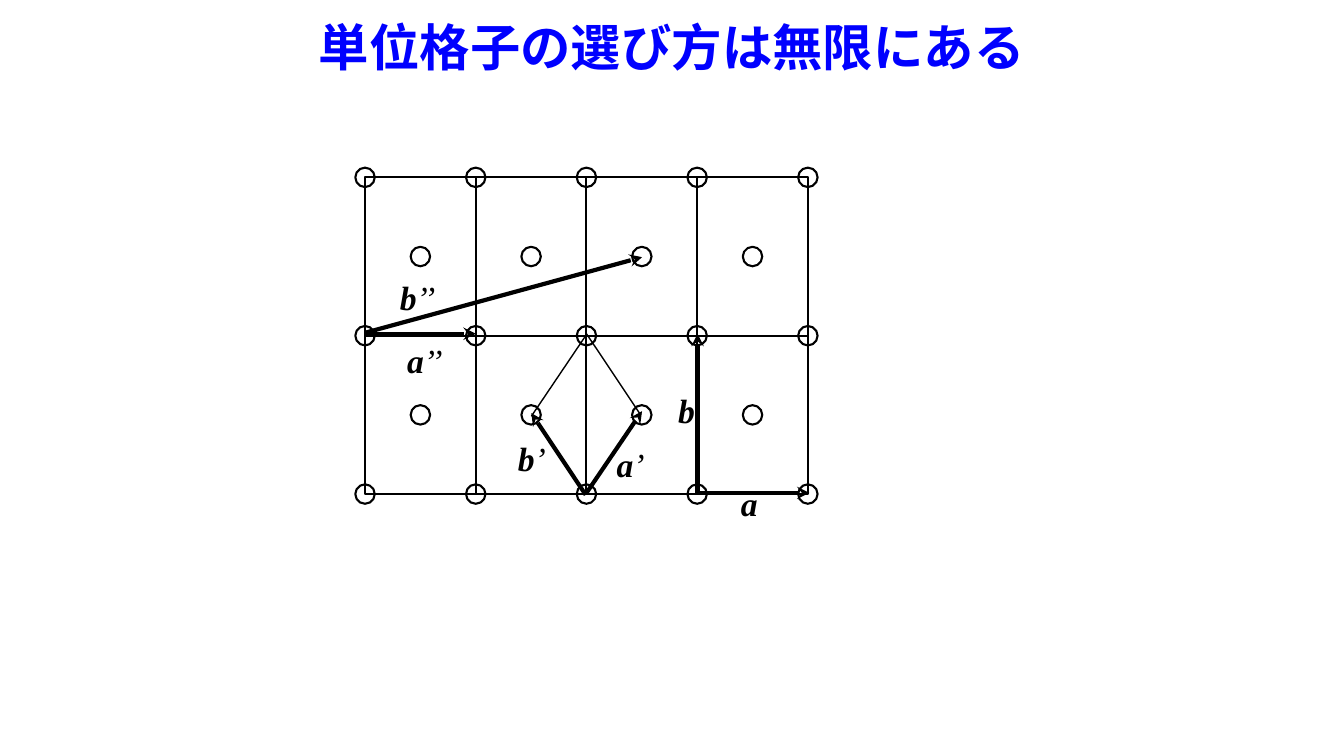
from dataclasses import dataclass
from itertools import product

from lxml.etree import SubElement
from pptx import Presentation
from pptx.dml.color import RGBColor
from pptx.enum.shapes import MSO_CONNECTOR, MSO_SHAPE
from pptx.enum.text import MSO_ANCHOR, PP_ALIGN
from pptx.oxml.ns import qn
from pptx.shapes.shapetree import GroupShapes
from pptx.slide import Slide
from pptx.text.text import _Run
from pptx.util import Cm, Pt


@dataclass(frozen=True)
class Theme:
    ink: RGBColor = RGBColor(0, 0, 0)
    title_color: RGBColor = RGBColor(0, 0, 255)
    font: str = "Times New Roman"
    title_size: int = 36
    label_size: int = 24
    lattice_line: float = 1.5
    vector_line: float = 3
    guide_line: float = 1


@dataclass(frozen=True)
class Segment:
    """A straight line between two points, in centimetres."""
    start: tuple[float, float]
    end: tuple[float, float]
    is_vector: bool = True


@dataclass(frozen=True)
class Label:
    """A vector name: an italic letter followed by its prime marks."""
    letter: str
    primes: str
    left: float
    top: float
    width: float


THEME = Theme()
COLUMNS, ROWS = 4, 2
LATTICE_LEFT, LATTICE_TOP = 9.2, 4.47
CELL_WIDTH, CELL_HEIGHT = 2.79, 3.99
ATOM_SIZE = 0.49
LABEL_HEIGHT = 1.27

SEGMENTS = [
    # Rectangular cell: a, b
    Segment((17.58, 12.42), (20.4, 12.42)),
    Segment((17.58, 12.42), (17.58, 8.41)),
    # Rhombic cell: a’, b’ and the two closing sides
    Segment((14.78, 12.42), (16.18, 10.36)),
    Segment((14.76, 12.47), (13.39, 10.41)),
    Segment((13.39, 10.49), (14.78, 8.43), is_vector=False),
    Segment((16.15, 10.46), (14.78, 8.41), is_vector=False),
    # Oblique cell: a’’, b’’
    Segment((9.19, 8.41), (11.99, 8.41)),
    Segment((9.22, 8.38), (16.18, 6.48)),
]

LABELS = [
    Label("a", "", 18.42, 12.04, 0.94),
    Label("b", "", 16.84, 9.7, 0.94),
    Label("a", "’", 15.29, 11.05, 1.22),
    Label("b", "’", 12.8, 10.9, 1.22),
    Label("a", "’’", 10.01, 8.43, 1.42),
    Label("b", "’’", 9.83, 6.86, 1.4),
]


def format_run(run: _Run, size: int, color: RGBColor, bold: bool, italic: bool) -> None:
    run.font.name = THEME.font
    run.font.size = Pt(size)
    run.font.color.rgb = color
    run.font.bold = bold
    run.font.italic = italic


def add_title(slide: Slide, text: str) -> None:
    text_frame = slide.shapes.add_textbox(Cm(4.23), Cm(0), Cm(25.4), Cm(2.33)).text_frame
    text_frame.word_wrap = True
    text_frame.vertical_anchor = MSO_ANCHOR.MIDDLE
    text_frame.text = text
    paragraph = text_frame.paragraphs[0]
    paragraph.alignment = PP_ALIGN.CENTER
    format_run(paragraph.runs[0], THEME.title_size, THEME.title_color, True, False)


def add_outline(shapes: GroupShapes, kind: MSO_SHAPE, left: float, top: float,
                width: float, height: float) -> None:
    shape = shapes.add_shape(kind, Cm(left), Cm(top), Cm(width), Cm(height))
    shape.shadow.inherit = False
    shape.fill.background()
    shape.line.color.rgb = THEME.ink
    shape.line.width = Pt(THEME.lattice_line)


def add_atom(shapes: GroupShapes, column: float, row: float) -> None:
    left = LATTICE_LEFT + column * CELL_WIDTH - ATOM_SIZE / 2
    top = LATTICE_TOP + row * CELL_HEIGHT - ATOM_SIZE / 2
    add_outline(shapes, MSO_SHAPE.OVAL, left, top, ATOM_SIZE, ATOM_SIZE)


def add_lattice(slide: Slide) -> None:
    shapes = slide.shapes.add_group_shape().shapes
    # Cells, each with an atom at its centre
    for row, column in product(range(ROWS), range(COLUMNS)):
        add_outline(shapes, MSO_SHAPE.RECTANGLE,
                    LATTICE_LEFT + column * CELL_WIDTH,
                    LATTICE_TOP + row * CELL_HEIGHT, CELL_WIDTH, CELL_HEIGHT)
        add_atom(shapes, column + 0.5, row + 0.5)
    # Atoms at the corners
    for row, column in product(range(ROWS + 1), range(COLUMNS + 1)):
        add_atom(shapes, column, row)


def add_segment(slide: Slide, segment: Segment) -> None:
    connector = slide.shapes.add_connector(
        MSO_CONNECTOR.STRAIGHT, *map(Cm, segment.start + segment.end))
    connector.line.color.rgb = THEME.ink
    connector.line.width = Pt(THEME.vector_line if segment.is_vector else THEME.guide_line)
    if segment.is_vector:
        SubElement(connector.line._get_or_add_ln(), qn("a:tailEnd"), type="stealth")
    SubElement(connector._element.spPr, qn("a:effectLst"))


def add_label(slide: Slide, label: Label) -> None:
    text_frame = slide.shapes.add_textbox(
        Cm(label.left), Cm(label.top), Cm(label.width), Cm(LABEL_HEIGHT)).text_frame
    text_frame.word_wrap = False
    paragraph = text_frame.paragraphs[0]
    paragraph.text = label.letter
    format_run(paragraph.runs[0], THEME.label_size, THEME.ink, True, True)
    if label.primes:
        run = paragraph.add_run()
        run.text = label.primes
        format_run(run, THEME.label_size, THEME.ink, False, True)


def main() -> None:
    presentation = Presentation()
    presentation.slide_width, presentation.slide_height = Cm(33.87), Cm(19.05)
    slide = presentation.slides.add_slide(presentation.slide_layouts[6])
    add_title(slide, "単位格子の選び方は無限にある")
    add_lattice(slide)
    for segment in SEGMENTS:
        add_segment(slide, segment)
    for label in LABELS:
        add_label(slide, label)
    presentation.save("out.pptx")


if __name__ == "__main__":
    main()
